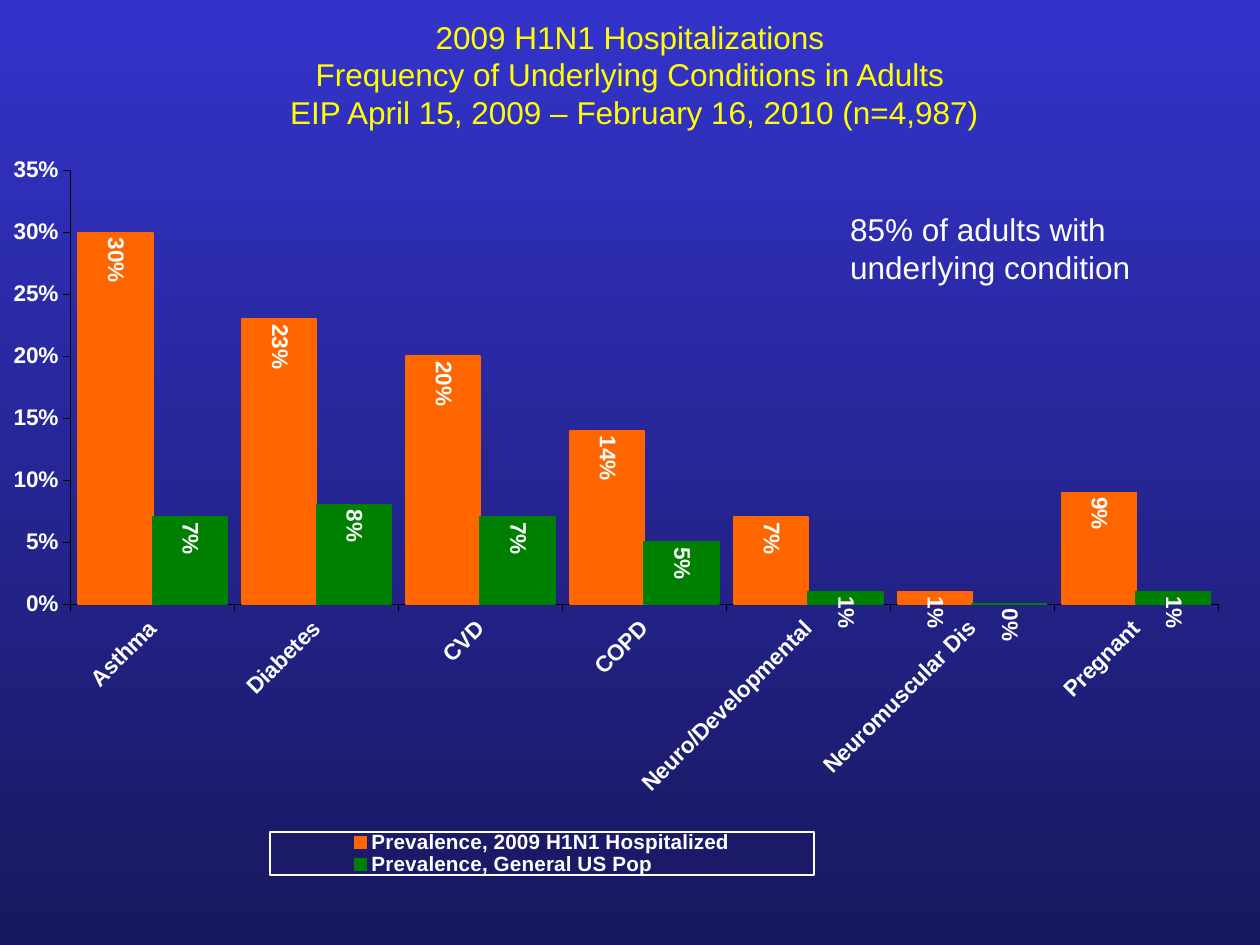
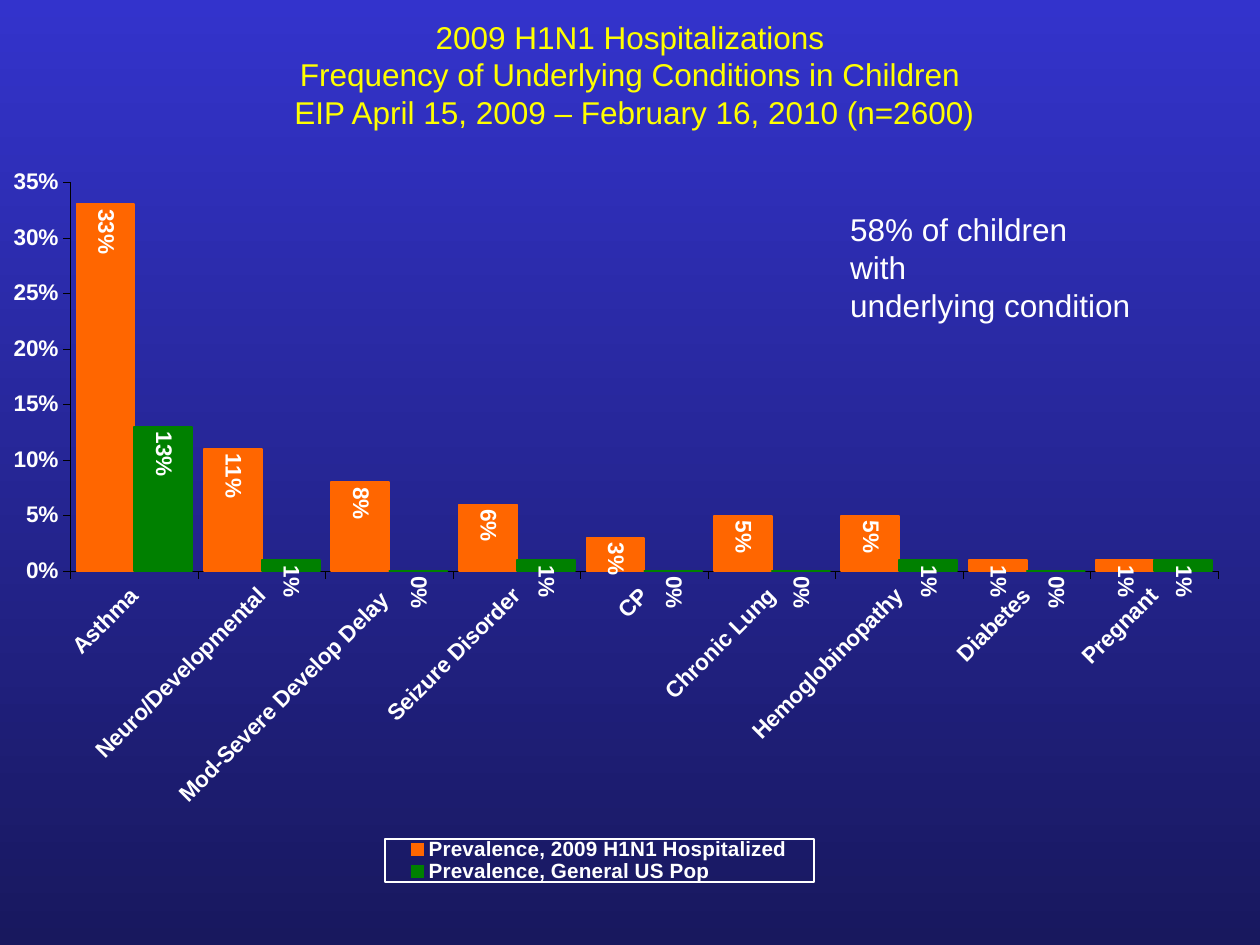
"""Build two slides comparing underlying conditions in H1N1 hospitalizations of adults and children."""
from pptx import Presentation
from pptx.chart.data import CategoryChartData
from pptx.dml.color import RGBColor
from pptx.enum.chart import XL_CHART_TYPE as ChartType, XL_LABEL_POSITION as LabelPosition
from pptx.enum.chart import XL_LEGEND_POSITION as LegendPosition, XL_TICK_MARK as TickMark
from pptx.enum.text import MSO_ANCHOR as Anchor, PP_ALIGN as Align
from pptx.oxml import parse_xml
from pptx.oxml.ns import nsdecls, qn
from pptx.util import Cm, Pt

COLORS = {
    "sky": "3333CC",
    "night": "18185E",
    "title": "FFFF00",
    "text": "FFFFFF",
    "axis": "000000",
    "hospitalized": "FF6600",
    "population": "008000",
}

GROUPS = [
    {
        "title": "2009 H1N1 Hospitalizations\nFrequency of Underlying Conditions in Adults\n"
                 " EIP April 15, 2009 – February 16, 2010 (n=4,987)",
        "note": "85% of adults with\nunderlying condition",
        "conditions": ["Asthma", "Diabetes", "CVD", "COPD", "Neuro/Developmental",
                       "Neuromuscular Dis", "Pregnant"],
        "hospitalized": [0.3, 0.23, 0.2, 0.14, 0.07, 0.01, 0.09],
        "population": [0.07, 0.08, 0.07, 0.05, 0.01, 0, 0.01],
        "top": 2.97,
        "plot_height": 0.59,
        "legend": (0.222, 0.932, 0.446, 0.059),
    },
    {
        "title": "2009 H1N1 Hospitalizations\nFrequency of Underlying Conditions in Children\n"
                 " EIP April 15, 2009 – February 16, 2010 (n=2600)",
        "note": "58% of children with\nunderlying condition",
        "conditions": ["Asthma", "Neuro/Developmental", "Mod-Severe Develop Delay ",
                       "Seizure Disorder", "CP", "Chronic Lung", "Hemoglobinopathy",
                       "Diabetes", "Pregnant"],
        "hospitalized": [0.33, 0.11, 0.08, 0.06, 0.03, 0.05, 0.05, 0.01, 0.01],
        "population": [0.13, 0.01, 0, 0.01, 0, 0, 0.01, 0, 0.01],
        "top": 3.2,
        "plot_height": 0.53,
        "legend": (0.316, 0.926, 0.352, 0.059),
    },
]
SERIES = {
    "hospitalized": "Prevalence, 2009 H1N1 Hospitalized",
    "population": "Prevalence, General US Pop",
}


def style(font, size, color, bold=False):
    font.name = "Arial"
    font.size = Pt(size)
    font.bold = bold
    font.color.rgb = RGBColor.from_string(COLORS[color])


def set_layout(parent, index, box, target=""):
    for old in parent.findall(qn("c:layout")):
        parent.remove(old)
    sides = "".join(f'<c:{tag} val="{value}"/>' for tag, value in zip("xywh", box))
    parent.insert(index, parse_xml(
        f'<c:layout {nsdecls("c")}><c:manualLayout>{target}'
        f'<c:xMode val="edge"/><c:yMode val="edge"/>{sides}</c:manualLayout></c:layout>'))


prs = Presentation()
prs.slide_width, prs.slide_height = Cm(25.4), Cm(19.05)

backdrop = prs.slide_master.background.fill
backdrop.gradient()
backdrop.gradient_angle = 270
for stop, shade in zip(backdrop.gradient_stops, ("sky", "night")):
    stop.color.rgb = RGBColor.from_string(COLORS[shade])

for group in GROUPS:
    slide = prs.slides.add_slide(prs.slide_layouts[6])

    title = slide.shapes.add_textbox(0, 0, prs.slide_width, Cm(3)).text_frame
    title.word_wrap = True
    title.vertical_anchor = Anchor.MIDDLE
    heading = title.paragraphs[0]
    heading.text = group["title"]
    heading.alignment = Align.CENTER
    for run in heading.runs:
        style(run.font, 18, "title")

    prevalence = CategoryChartData(number_format="0%")
    prevalence.categories = group["conditions"]
    for key, label in SERIES.items():
        prevalence.add_series(label, group[key])
    chart = slide.shapes.add_chart(ChartType.COLUMN_CLUSTERED, 0, Cm(group["top"]),
                                   Cm(24.56), Cm(14.8), prevalence).chart
    chart.has_title = False
    style(chart.font, 12.9, "axis", True)

    bars = chart.plots[0]
    bars.gap_width = 20
    bars.overlap = 0
    bars.vary_by_categories = False
    for key, series in zip(SERIES, bars.series):
        color = RGBColor.from_string(COLORS[key])
        series.format.fill.solid()
        series.format.fill.fore_color.rgb = color
        series.format.line.color.rgb = color
        series.format.line.width = Pt(1.07)
        series.invert_if_negative = False
        labels = series.data_labels
        labels.show_value = True
        labels.position = LabelPosition.INSIDE_END
        labels.number_format = "0%"
        labels.number_format_is_linked = False
        style(labels.font, 12.9, "text", True)
        turned = labels._element.find(qn("c:txPr")).find(qn("a:bodyPr"))
        turned.set("rot", "5400000")
        turned.set("vert", "horz")

    for axis in (chart.category_axis, chart.value_axis):
        axis.has_major_gridlines = False
        axis.major_tick_mark = TickMark.OUTSIDE
        axis.minor_tick_mark = TickMark.NONE
        axis.tick_labels.number_format = "0%"
        axis.tick_labels.number_format_is_linked = False
        style(axis.tick_labels.font, 12.9, "text", True)
        axis.format.line.color.rgb = RGBColor.from_string(COLORS["axis"])
        axis.format.line.width = Pt(0.27)
    slanted = chart.category_axis._element.find(qn("c:txPr")).find(qn("a:bodyPr"))
    slanted.set("rot", "-2700000")
    slanted.set("vert", "horz")
    chart.value_axis.minimum_scale = 0
    chart.value_axis.maximum_scale = 0.35
    chart.value_axis.major_unit = 0.05

    chart.has_legend = True
    legend = chart.legend
    legend.position = LegendPosition.RIGHT
    legend.include_in_layout = False
    style(legend.font, 11.8, "text", True)
    set_layout(legend._element, 1, group["legend"])
    legend._element.find(qn("c:txPr")).addprevious(parse_xml(
        f'<c:spPr {nsdecls("c", "a")}><a:noFill/><a:ln w="13600"><a:solidFill>'
        f'<a:srgbClr val="{COLORS["text"]}"/></a:solidFill></a:ln></c:spPr>'))
    set_layout(bars._element.getparent(), 0, (0.059, 0.032, 0.942, group["plot_height"]),
               '<c:layoutTarget val="inner"/>')

    note = slide.shapes.add_textbox(Cm(16.89), Cm(4.11), Cm(6.15), Cm(1.78)).text_frame
    note.word_wrap = False
    note.text = group["note"]
    for line in note.paragraphs:
        style(line.runs[0].font, 18, "text")

prs.save("out.pptx")
